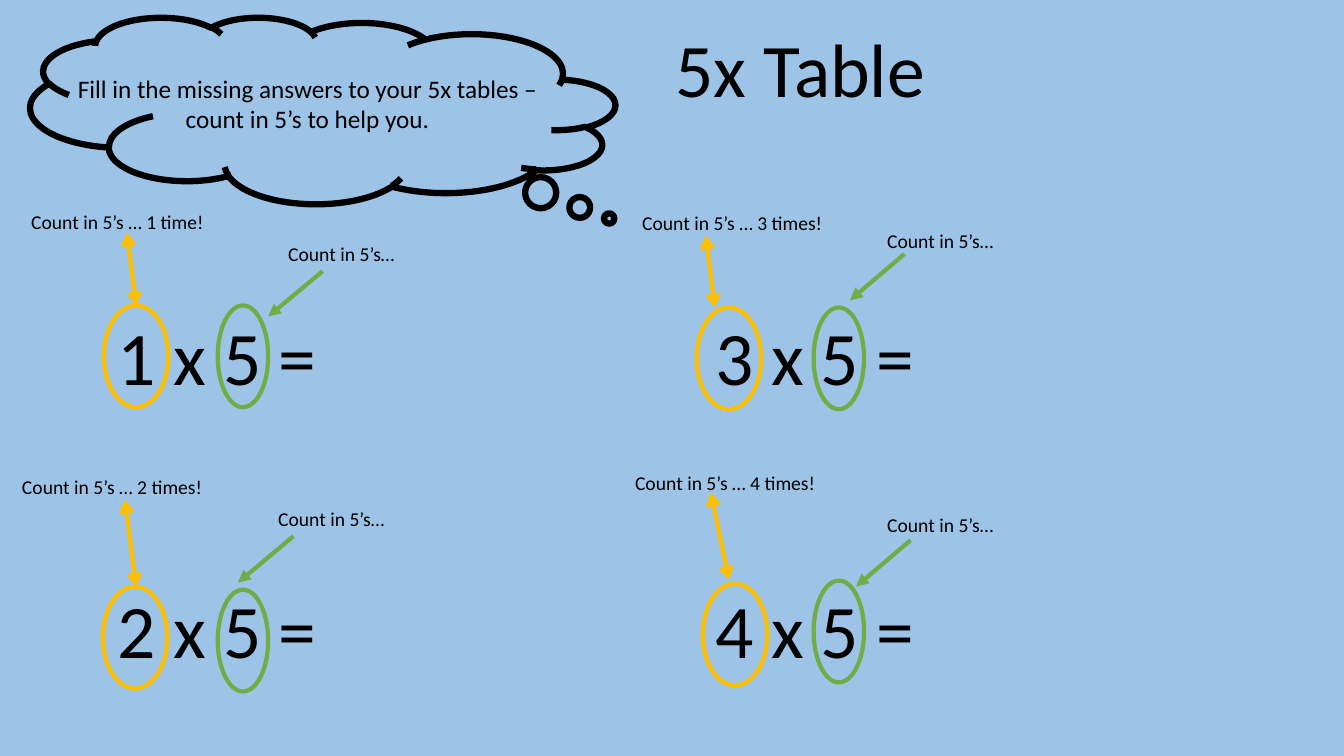
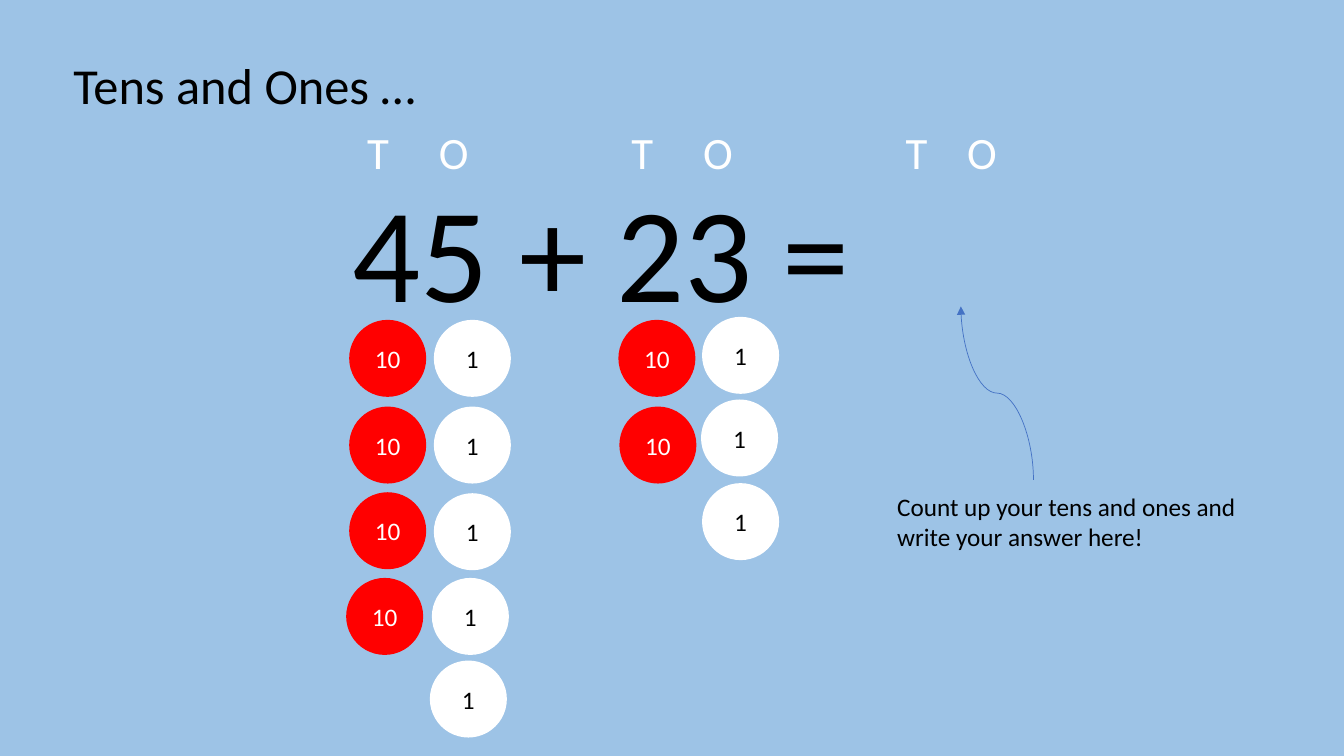
"""Build two number practice slides: the 5x table and tens and ones."""
from lxml import etree
from pptx import Presentation
from pptx.dml import color
from pptx.enum import shapes, text
from pptx.oxml import ns
from pptx.util import Emu, Pt

PX = 9144
FONT = "Calibri"
SKY, BLACK, WHITE, RED = "9DC3E6", "000000", "FFFFFF", "FF0000"
AMBER, GREEN, BLUE = "FFC000", "70AD47", "4472C4"
COUNTER_SIZE = 75
OVAL = shapes.MSO_SHAPE.OVAL
CENTER = text.PP_ALIGN.CENTER
HINT = "Count in 5’s…"

# equation, its place, note, its place, hint place, rings, arrow ends
PROBLEMS = [
    ("1 x 5 =", (107, 303), "Count in 5’s … 1 time!", (21, 203), (276, 235),
     (103, 303), (216, 303), (126, 231, 135, 303), (320, 269, 266, 314)),
    ("2 x 5 =", (107, 573), "Count in 5’s … 2 times!", (12, 466), (266, 498),
     (102, 582), (216, 585), (124, 496, 135, 582), (291, 532, 236, 578)),
    ("3 x 5 =", (700, 303), "Count in 5’s … 3 times!", (627, 204), (870, 222),
     (691, 305), (807, 305), (700, 234, 709, 305), (897, 252, 843, 298)),
    ("4 x 5 =", (700, 573), "Count in 5’s … 4 times!", (620, 462), (870, 504),
     (697, 579), (807, 576), (705, 489, 723, 575), (903, 536, 849, 582)),
]
TENS = [(347, 318), (347, 404), (347, 489), (344, 574), (614, 318), (615, 404)]
ONES = [(431, 318), (431, 404), (431, 490), (429, 574), (427, 656),
        (697, 315), (696, 397), (697, 480)]
PLACE_CENTERS = [("T", 375), ("O", 450), ("T", 637), ("O", 712), ("T", 909), ("O", 974)]


def px(*lengths):
    """Turn pixel lengths into EMU."""
    return [Emu(length * PX) for length in lengths]


def rgb(value):
    """Return the colour for a hex string."""
    return color.RGBColor.from_string(value)


def write(frame, lines, size, ink=BLACK, align=None):
    """Write one paragraph per line into a text frame."""
    frame.word_wrap = True
    for index, line in enumerate(lines):
        paragraph = frame.add_paragraph() if index else frame.paragraphs[0]
        paragraph.alignment = align
        run = paragraph.add_run()
        run.text = line
        run.font.name, run.font.size = FONT, Pt(size)
        run.font.color.rgb = rgb(ink)


def add_text(slide, box, lines, size, ink=BLACK, align=None):
    """Add a wrapped text box."""
    write(slide.shapes.add_textbox(*px(*box)).text_frame, lines, size, ink, align)


def add_outline(slide, kind, box, ink, width, fill=None):
    """Add a preset shape with a line and an optional fill."""
    shape = slide.shapes.add_shape(kind, *px(*box))
    shape.shadow.inherit = False
    if fill:
        shape.fill.solid()
        shape.fill.fore_color.rgb = rgb(fill)
    else:
        shape.fill.background()
    shape.line.color.rgb = rgb(ink)
    shape.line.width = Pt(width)
    return shape


def add_arrow(slide, ends, ink, width, tail="triangle", head=None,
              kind=shapes.MSO_CONNECTOR.STRAIGHT):
    """Add a connector with arrowheads."""
    connector = slide.shapes.add_connector(kind, *px(*ends))
    connector.line.color.rgb = rgb(ink)
    connector.line.width = Pt(width)
    properties = connector._element.spPr
    line = properties.find(ns.qn("a:ln"))
    for tag, style in (("a:headEnd", head), ("a:tailEnd", tail)):
        if style:
            etree.SubElement(line, ns.qn(tag), type=style)
    etree.SubElement(properties, ns.qn("a:effectLst"))
    return connector


def add_slide(presentation, title, box, size, align=None):
    """Add a blank slide with the shared background and title style."""
    slide = presentation.slides.add_slide(presentation.slide_layouts[6])
    slide.background.fill.solid()
    slide.background.fill.fore_color.rgb = rgb(SKY)
    add_text(slide, box, [title], size, align=align)
    return slide


def add_problem(slide, equation, place, note, note_at, hint_at,
                times_ring, five_ring, times_arrow, five_arrow):
    """Add one multiplication with its ringed and explained numbers."""
    add_text(slide, (*place, 459, 101), [equation], 54)
    add_text(slide, (*note_at, 206, 34), [note], 14)
    add_text(slide, (*hint_at, 150, 34), [HINT], 14)
    add_outline(slide, OVAL, (*times_ring, 64, 101), AMBER, 3)
    add_outline(slide, OVAL, (*five_ring, 50, 101), GREEN, 3)
    add_arrow(slide, times_arrow, AMBER, 3, tail="arrow", head="arrow")
    add_arrow(slide, five_arrow, GREEN, 3)


def add_counter(slide, place, label, fill, ink):
    """Add a round place value counter."""
    box = (*place, COUNTER_SIZE, COUNTER_SIZE)
    counter = add_outline(slide, OVAL, box, fill, 1, fill)
    counter.text_frame.vertical_anchor = text.MSO_ANCHOR.MIDDLE
    write(counter.text_frame, [label], 18, ink, CENTER)


def add_thought(slide):
    """Add the thought cloud with its instruction."""
    cloud = add_outline(slide, shapes.MSO_SHAPE.CLOUD_CALLOUT, (30, 17, 580, 185), BLACK, 4.5)
    cloud.adjustments[0], cloud.adjustments[1] = -0.49, 0.58
    cloud._element.spPr.xfrm.set("flipH", "1")
    add_text(slide, (44, 68, 522, 71),
             ["Fill in the missing answers to your 5x tables – count in 5’s to help you."],
             18, align=CENTER)


def build_times_table(presentation):
    """Build the 5x table slide."""
    slide = add_slide(presentation, "5x Table", (658, 17, 271, 101), 54, CENTER)
    add_thought(slide)
    for problem in PROBLEMS:
        add_problem(slide, *problem)


def build_tens_and_ones(presentation):
    """Build the tens and ones addition slide."""
    slide = add_slide(presentation, "Tens and Ones …", (63, 49, 427, 71), 36)
    for letter, center in PLACE_CENTERS:
        add_text(slide, (center - 30, 119, 60, 64), [letter], 32, WHITE, CENTER)
    add_text(slide, (340, 162, 545, 172), ["45 + 23 ="], 96)
    for place in TENS:
        add_counter(slide, place, "10", RED, WHITE)
    for place in ONES:
        add_counter(slide, place, "1", WHITE, BLACK)
    add_text(slide, (880, 482, 405, 71),
             ["Count up your tens and ones and", "write your answer here!"], 18)
    pointer = add_arrow(slide, (903, 426, 1075, 354), BLUE, 0.5,
                        kind=shapes.MSO_CONNECTOR.CURVE)
    pointer._element.spPr.xfrm.set("rot", str(270 * 60000))


def main():
    """Build and save the presentation."""
    presentation = Presentation()
    presentation.slide_width, presentation.slide_height = px(1333, 750)
    build_times_table(presentation)
    build_tens_and_ones(presentation)
    presentation.save("out.pptx")


if __name__ == "__main__":
    main()
